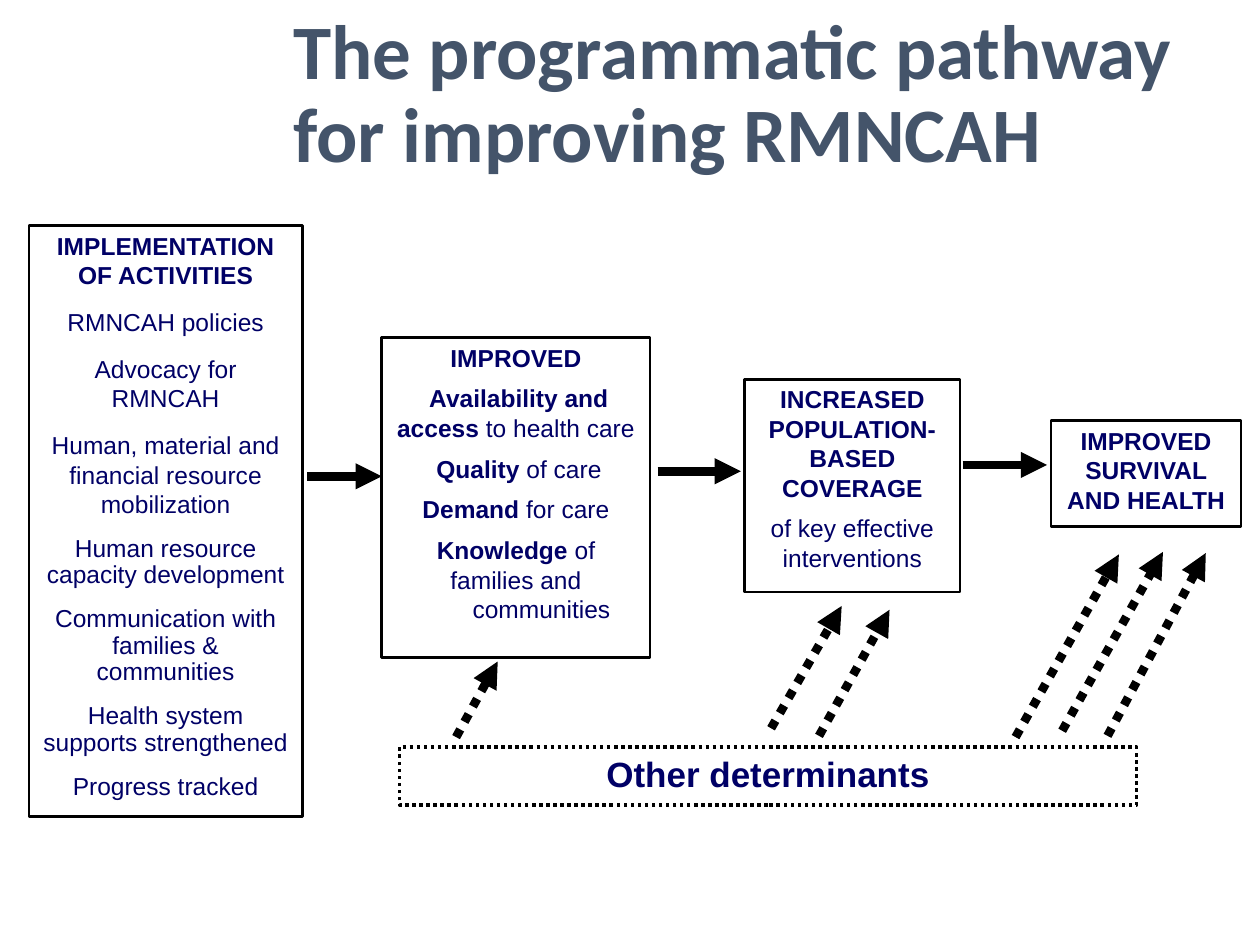
from lxml import etree
from pptx import Presentation
from pptx.dml.color import RGBColor
from pptx.enum.dml import MSO_LINE
from pptx.enum.shapes import MSO_CONNECTOR, MSO_SHAPE
from pptx.enum.text import MSO_ANCHOR, PP_ALIGN
from pptx.oxml.ns import qn
from pptx.util import Inches, Pt

RECT = MSO_SHAPE.RECTANGLE
STRAIGHT = MSO_CONNECTOR.STRAIGHT
DOTTED = MSO_LINE.ROUND_DOT  # written as sysDot
TOP, MIDDLE = MSO_ANCHOR.TOP, MSO_ANCHOR.MIDDLE
CENTER = PP_ALIGN.CENTER

SLATE = RGBColor(0x44, 0x54, 0x6A)
NAVY = RGBColor(0x00, 0x00, 0x66)
BLACK = RGBColor(0x00, 0x00, 0x00)

WIDTH, HEIGHT = Inches(10), Inches(7.5)


def across(percent):
    return round(WIDTH * percent / 100)


def down(percent):
    return round(HEIGHT * percent / 100)


def frame(left, top, width, height):
    """Turn percentages of the slide into a position and a size."""
    return across(left), down(top), across(width), down(height)


def add_run(p, text, size, color, bold, font="Arial"):
    r = p.add_run()
    r.text = text
    r.font.name, r.font.size, r.font.bold = font, Pt(size), bold
    r.font.color.rgb = color


def add_title(slide, text, *area):
    tf = slide.shapes.add_textbox(*frame(*area)).text_frame
    tf.word_wrap = True
    tf.vertical_anchor = MIDDLE
    p = tf.paragraphs[0]
    p.line_spacing = 0.9
    add_run(p, text, 44, SLATE, True, "Calibri")


def add_box(slide, area, paragraphs, size=14, gap=6.5, line=1.5, dash=None,
            rtl=(), tight=()):
    """Outlined box; each paragraph is a list of (text, bold) runs.

    rtl and tight hold the indexes of right-to-left and 90 % spaced paragraphs.
    """
    sp = slide.shapes.add_shape(RECT, *frame(*area))
    sp.shadow.inherit = False
    sp.fill.background()
    sp.line.color.rgb = BLACK
    sp.line.width = Pt(line)
    if dash:
        sp.line.dash_style = dash
    tf = sp.text_frame
    tf.word_wrap = True
    tf.vertical_anchor = TOP
    tf.margin_left = tf.margin_right = Inches(0.09)
    tf.margin_top = tf.margin_bottom = Inches(0.04)
    for i, runs in enumerate(paragraphs):
        p = tf.add_paragraph() if i else tf.paragraphs[0]
        p.alignment = CENTER
        p.space_before = Pt(gap if i else 0)
        if i in tight:
            p.line_spacing = 0.9
        if i in rtl:
            p._p.get_or_add_pPr().set("rtl", "1")
        for text, bold in runs:
            add_run(p, text, size, NAVY, bold)


def add_arrow(slide, x1, y1, x2, y2, dash=None):
    cx = slide.shapes.add_connector(
        STRAIGHT, across(x1), down(y1), across(x2), down(y2))
    cx.line.color.rgb = BLACK
    cx.line.width = Pt(5)
    if dash:
        cx.line.dash_style = dash
    etree.SubElement(cx.line._get_or_add_ln(), qn("a:tailEnd"), type="triangle")
    etree.SubElement(cx._element.spPr, qn("a:effectLst"))


def main():
    prs = Presentation()
    prs.slide_width, prs.slide_height = WIDTH, HEIGHT
    slide = prs.slides.add_slide(prs.slide_layouts[6])

    add_title(slide, "The programmatic pathway for improving RMNCAH",
              22.3, 0, 73.2, 20.4)

    # Pathway boxes, left to right
    activities = [
        "RMNCAH policies",
        "Advocacy for RMNCAH",
        "Human, material and financial resource mobilization",
        "Human resource capacity development",
        "Communication with families & communities",
        "Health system supports strengthened",
        "Progress tracked",
    ]
    add_box(slide, (2.3, 23.87, 21.7, 62.53),
            [[("IMPLEMENTATION OF ACTIVITIES", True)]]
            + [[(text, False)] for text in activities],
            gap=10, tight=range(4, 8))
    add_box(slide, (30.3, 35.73, 21.3, 33.87), [
        [("IMPROVED", True)],
        [(" Availability and access ", True), ("to health care", False)],
        [("Quality", True), (" of care ", False)],
        [("Demand ", True), ("for care", False)],
        [("Knowledge", True), (" of families and communities\t", False)],
    ], rtl=(0, 2, 3, 4))
    add_box(slide, (59.1, 40.13, 17.1, 22.53), [
        [("INCREASED POPULATION-BASED COVERAGE", True)],
        [("of key effective interventions", False)],
    ], rtl=(0, 1))
    add_box(slide, (83.4, 44.53, 15.1, 11.2),
            [[("IMPROVED SURVIVAL AND HEALTH", True)]], rtl=(0,))

    # Solid arrows between the boxes
    for x1, x2, y in [(24.4, 30.3, 50.4), (52.2, 58.8, 49.87),
                      (76.4, 83.1, 49.2)]:
        add_arrow(slide, x1, y, x2, y)

    # Other determinants and their dotted arrows
    add_box(slide, (31.7, 79.07, 58.5, 6.13), [[("Other determinants", True)]],
            size=20, line=2, dash=DOTTED, rtl=(0,))
    for ends in [
        (36.2, 78, 39.5, 70),
        (61.2, 77.07, 66.8, 64.13),
        (65, 77.87, 70.6, 64.53),
        (80.6, 78, 88.8, 58.67),
        (84.3, 77.33, 92.3, 58.4),
        (87.9, 77.87, 95.7, 58.53),
    ]:
        add_arrow(slide, *ends, dash=DOTTED)

    prs.save("out.pptx")


if __name__ == "__main__":
    main()
